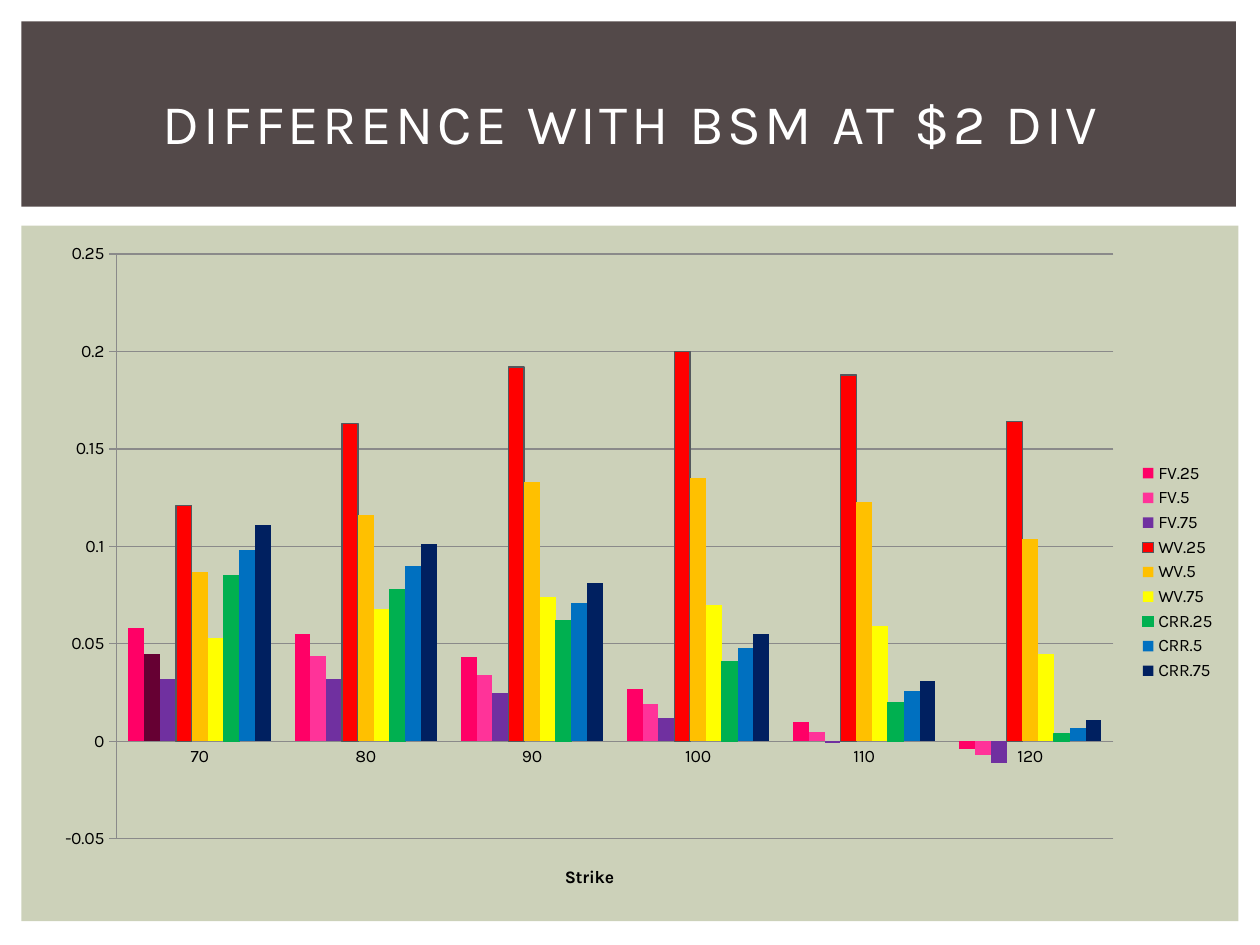
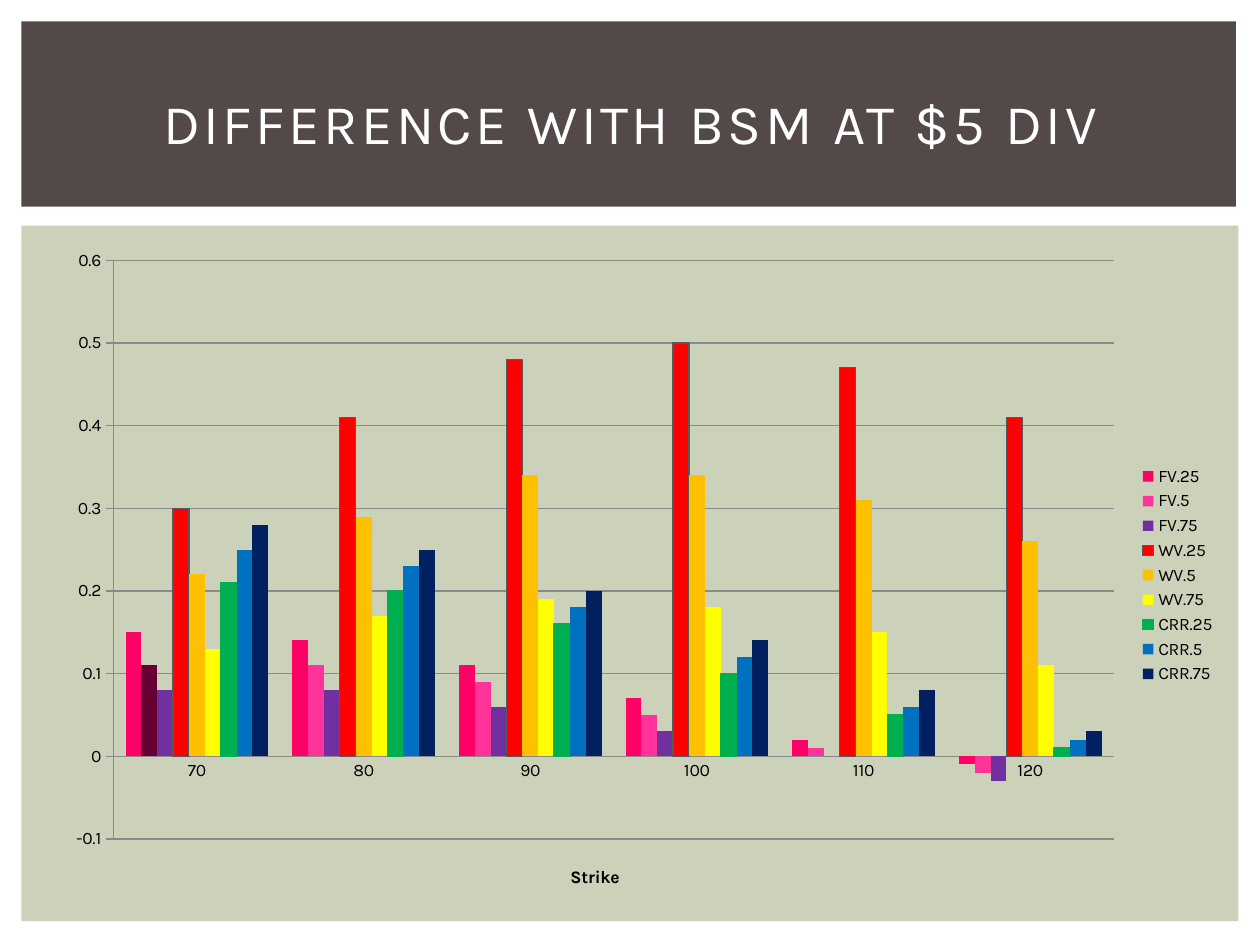
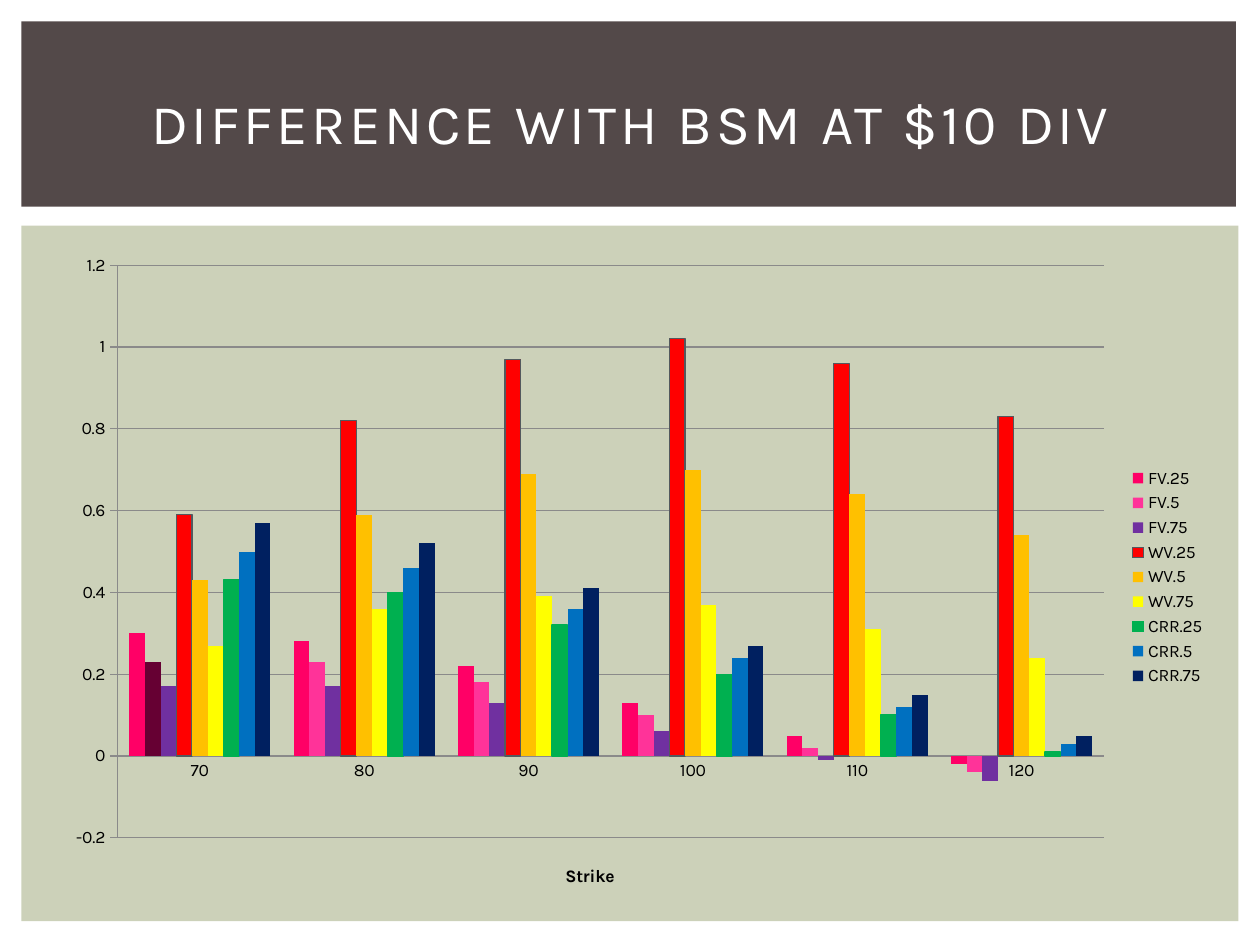
from dataclasses import dataclass

from pptx import Presentation
from pptx.chart.axis import ValueAxis
from pptx.chart.chart import Chart
from pptx.chart.data import CategoryChartData
from pptx.chart.series import BarSeries
from pptx.dml.color import RGBColor
from pptx.enum.chart import XL_CHART_TYPE as ChartType
from pptx.enum.chart import XL_LEGEND_POSITION as LegendPosition
from pptx.enum.chart import XL_TICK_MARK as TickMark
from pptx.enum.shapes import MSO_SHAPE as ShapeKind
from pptx.enum.text import MSO_ANCHOR as Anchor
from pptx.enum.text import MSO_AUTO_SIZE as AutoSize
from pptx.enum.text import PP_ALIGN as Align
from pptx.slide import Slide
from pptx.util import Inches, Pt

FONT = "Karla"
COLORS = {
    "panel": "CCD1B9", "band": "534949", "title": "FFFFFF", "text": "000000",
    "grid": "8A8A8A", "outline": "53595E", "first bar": "660033",
    "FV.25": "FF0066", "FV.5": "FF3399", "FV.75": "7030A0",
    "WV.25": "FF0000", "WV.5": "FFC000", "WV.75": "FFFF00",
    "CRR.25": "00B050", "CRR.5": "0070C0", "CRR.75": "002060",
}
STRIKES = ["70", "80", "90", "100", "110", "120"]
SERIES_NAMES = [f"{model}{share}" for model in ("FV", "WV", "CRR")
                for share in (".25", ".5", ".75")]
OUTLINES = {"WV.25": "outline", "CRR.25": "CRR.25"}


@dataclass(frozen=True)
class Area:
    left: float
    top: float
    width: float
    height: float

    def lengths(self) -> tuple[Inches, Inches, Inches, Inches]:
        return (Inches(self.left), Inches(self.top),
                Inches(self.width), Inches(self.height))


@dataclass(frozen=True)
class DividendSlide:
    dividend: int
    chart_area: Area
    low: float
    high: float
    step: float
    rows: list[list[float]]  # one row per series, one value per strike


TITLE_AREA = Area(0.42, 0.39, 9.17, 1.15)
BANDS = {"panel": Area(0.17, 1.79, 9.66, 5.52),
         "band": Area(0.17, 0.17, 9.64, 1.47)}

DIVIDEND_SLIDES = [
    DividendSlide(2, Area(0.33, 1.83, 9.42, 5.42), -0.05, 0.25, 0.05, [
        [0.058, 0.055, 0.043, 0.027, 0.01, -0.004],
        [0.045, 0.044, 0.034, 0.019, 0.005, -0.007],
        [0.032, 0.032, 0.025, 0.012, -0.001, -0.011],
        [0.121, 0.163, 0.192, 0.2, 0.188, 0.164],
        [0.087, 0.116, 0.133, 0.135, 0.123, 0.104],
        [0.053, 0.068, 0.074, 0.07, 0.059, 0.045],
        [0.085, 0.078, 0.062, 0.041, 0.02, 0.004],
        [0.098, 0.09, 0.071, 0.048, 0.026, 0.007],
        [0.111, 0.101, 0.081, 0.055, 0.031, 0.011],
    ]),
    DividendSlide(5, Area(0.42, 1.88, 9.33, 5.37), -0.1, 0.6, 0.1, [
        [0.15, 0.14, 0.11, 0.07, 0.02, -0.01],
        [0.11, 0.11, 0.09, 0.05, 0.01, -0.02],
        [0.08, 0.08, 0.06, 0.03, 0, -0.03],
        [0.3, 0.41, 0.48, 0.5, 0.47, 0.41],
        [0.22, 0.29, 0.34, 0.34, 0.31, 0.26],
        [0.13, 0.17, 0.19, 0.18, 0.15, 0.11],
        [0.21, 0.2, 0.16, 0.1, 0.05, 0.01],
        [0.25, 0.23, 0.18, 0.12, 0.06, 0.02],
        [0.28, 0.25, 0.2, 0.14, 0.08, 0.03],
    ]),
    DividendSlide(10, Area(0.42, 1.92, 9.25, 5.32), -0.2, 1.2, 0.2, [
        [0.3, 0.28, 0.22, 0.13, 0.05, -0.02],
        [0.23, 0.23, 0.18, 0.1, 0.02, -0.04],
        [0.17, 0.17, 0.13, 0.06, -0.01, -0.06],
        [0.59, 0.82, 0.97, 1.02, 0.96, 0.83],
        [0.43, 0.59, 0.69, 0.7, 0.64, 0.54],
        [0.27, 0.36, 0.39, 0.37, 0.31, 0.24],
        [0.43, 0.4, 0.32, 0.2, 0.1, 0.01],
        [0.5, 0.46, 0.36, 0.24, 0.12, 0.03],
        [0.57, 0.52, 0.41, 0.27, 0.15, 0.05],
    ]),
]


def color(name: str) -> RGBColor:
    return RGBColor.from_string(COLORS[name])


def style_font(font, size: float, color_name: str, bold: bool = False) -> None:
    font.name = FONT
    font.size = Pt(size)
    font.bold = bold
    font.color.rgb = color(color_name)


def style_line(line, color_name: str) -> None:
    line.color.rgb = color(color_name)
    line.width = Pt(0.75)


# Bands and title
def draw_bands(page: Slide) -> None:
    for name, area in BANDS.items():
        band = page.shapes.add_shape(ShapeKind.RECTANGLE, *area.lengths())
        band.shadow.inherit = False
        band.fill.solid()
        band.fill.fore_color.rgb = color(name)
        band.line.fill.background()


def write_title(page: Slide, text: str) -> None:
    title = page.shapes.title
    title.left, title.top, title.width, title.height = TITLE_AREA.lengths()
    page.shapes._spTree.append(title._element)  # bring in front of the bands
    frame = title.text_frame
    frame.word_wrap = True
    frame.auto_size = AutoSize.NONE
    frame.vertical_anchor = Anchor.MIDDLE
    para = frame.paragraphs[0]
    para.alignment = Align.CENTER
    span = para.add_run()
    span.text = text
    style_font(span.font, 32, "title")
    span.font._element.set("spc", "200")


# Chart
def style_series(series: BarSeries) -> None:
    series.invert_if_negative = False
    series.format.fill.solid()
    series.format.fill.fore_color.rgb = color(series.name)
    if series.name in OUTLINES:
        style_line(series.format.line, OUTLINES[series.name])
    else:
        series.format.line.fill.background()
    if series.name == "FV.5":
        first_bar = series.points[0].format
        first_bar.fill.solid()
        first_bar.fill.fore_color.rgb = color("first bar")
        first_bar.line.fill.background()


def style_value_axis(axis: ValueAxis, content: DividendSlide) -> None:
    axis.minimum_scale = content.low
    axis.maximum_scale = content.high
    axis.major_unit = content.step
    axis.major_tick_mark = TickMark.OUTSIDE
    axis.has_major_gridlines = True
    style_line(axis.major_gridlines.format.line, "grid")
    axis.tick_labels.number_format = "General"
    axis.tick_labels.number_format_is_linked = False


def style_strike_axis(chart: Chart) -> None:
    axis = chart.category_axis
    axis.major_tick_mark = TickMark.NONE
    axis.has_major_gridlines = False
    span = axis.axis_title.text_frame.paragraphs[0].add_run()
    span.text = "Strike"
    style_font(span.font, 10, "text", bold=True)


def draw_chart(page: Slide, content: DividendSlide) -> None:
    data = CategoryChartData()
    data.categories = STRIKES
    for name, values in zip(SERIES_NAMES, content.rows):
        data.add_series(name, values)
    chart = page.shapes.add_chart(
        ChartType.COLUMN_CLUSTERED, *content.chart_area.lengths(), data).chart
    chart.has_title = False
    style_font(chart.font, 10, "text")
    chart.has_legend = True
    chart.legend.position = LegendPosition.RIGHT
    chart.legend.include_in_layout = False
    style_value_axis(chart.value_axis, content)
    style_strike_axis(chart)
    for axis in (chart.value_axis, chart.category_axis):
        axis.minor_tick_mark = TickMark.NONE
        style_line(axis.format.line, "grid")
    plot = chart.plots[0]
    plot.gap_width = 150
    plot.overlap = 0
    plot.vary_by_categories = False
    for series in plot.series:
        style_series(series)


def main() -> None:
    deck = Presentation()
    deck.slide_width, deck.slide_height = Inches(10), Inches(7.5)
    title_only = deck.slide_layouts[5]
    for content in DIVIDEND_SLIDES:
        page = deck.slides.add_slide(title_only)
        draw_bands(page)
        write_title(page, f"DIFFERENCE WITH BSM AT ${content.dividend} DIV")
        draw_chart(page, content)
    deck.save("out.pptx")


if __name__ == "__main__":
    main()
